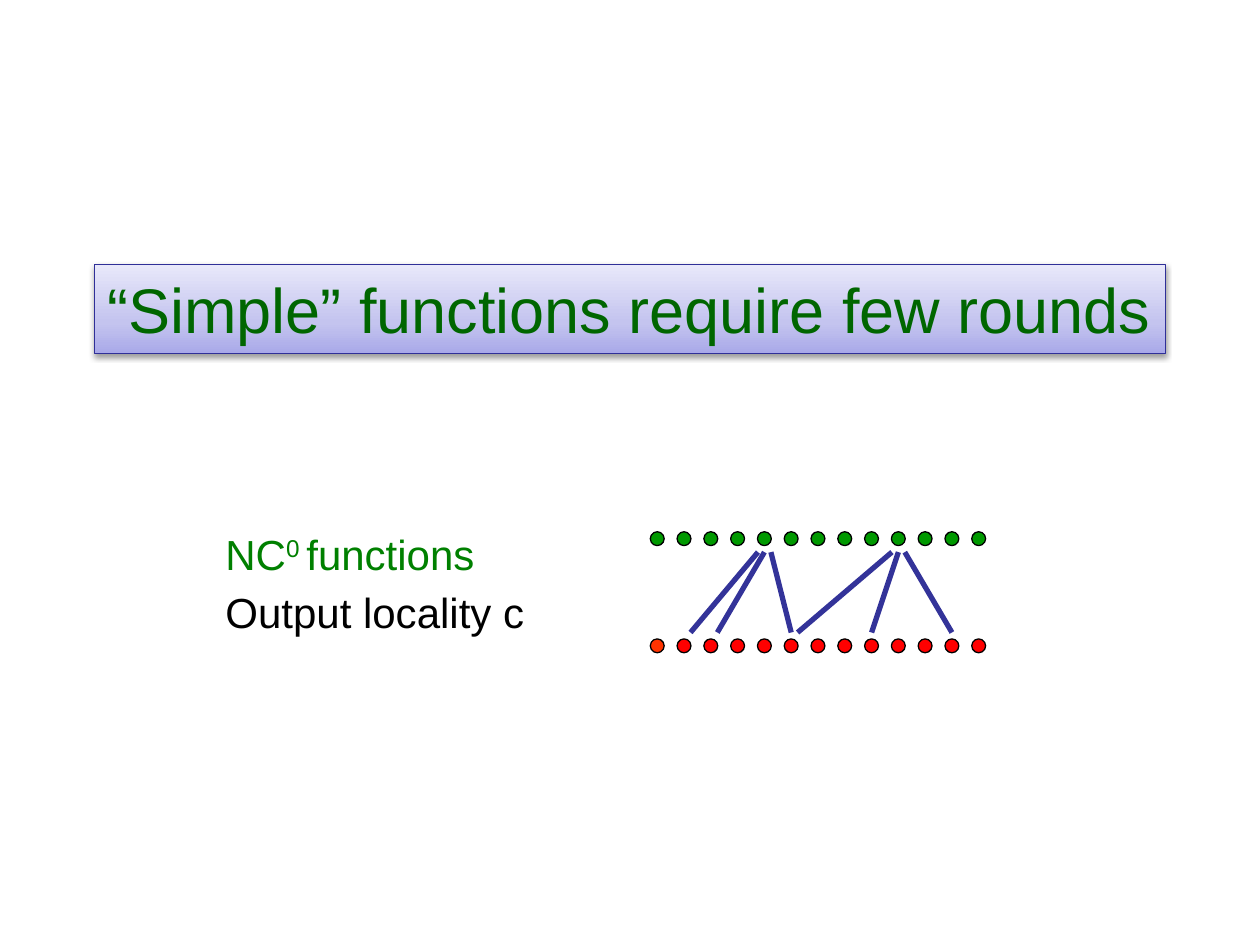
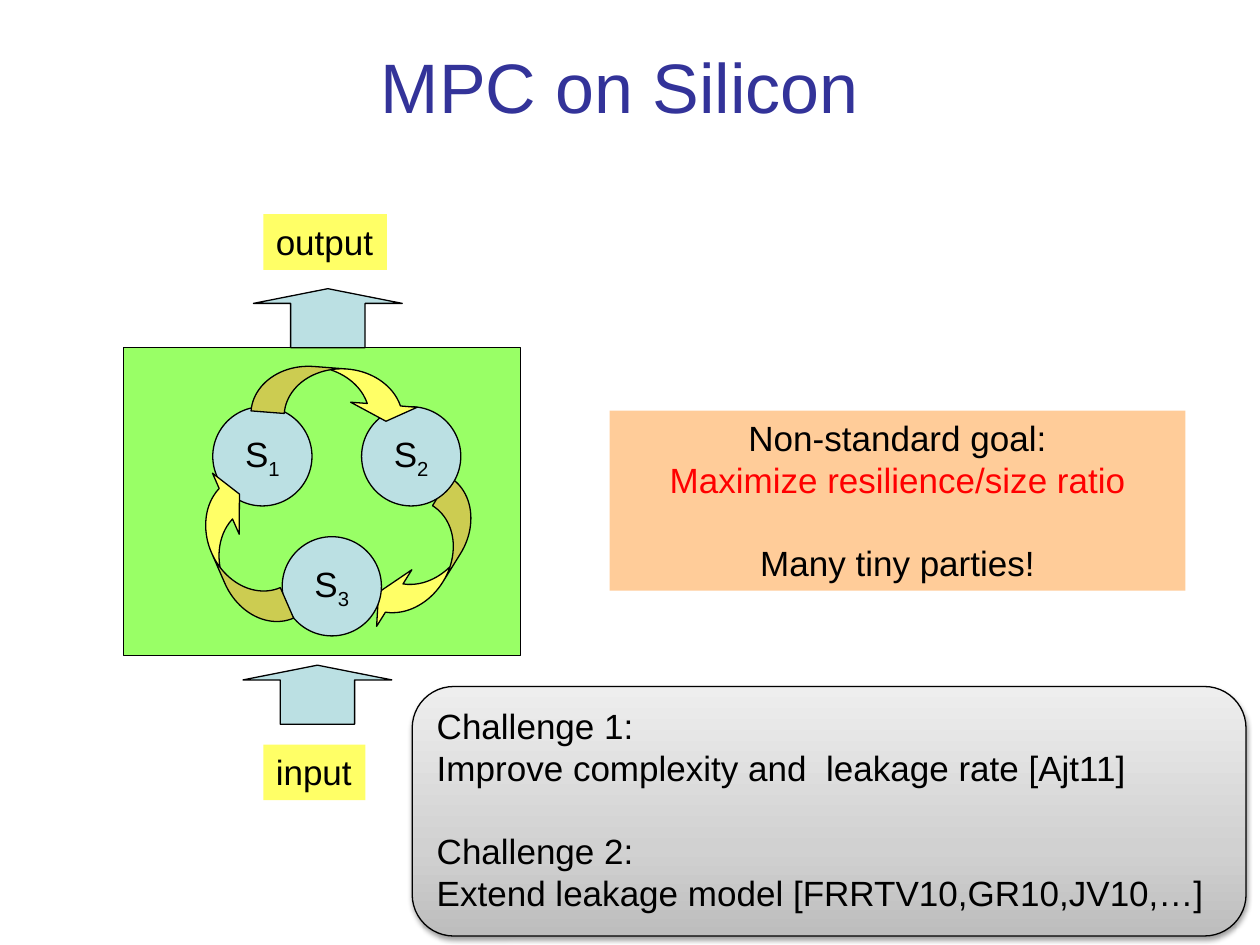
import copy

import pptx
import pptx.dml.color
import pptx.enum.shapes
import pptx.enum.text
import pptx.oxml
import pptx.oxml.ns
import pptx.util

Cm = pptx.util.Cm
Pt = pptx.util.Pt
RGB = pptx.dml.color.RGBColor.from_string
SHAPE = pptx.enum.shapes.MSO_SHAPE
ALIGN = pptx.enum.text.PP_ALIGN
ANCHOR = pptx.enum.text.MSO_ANCHOR
FONT = "Arial"
COLORS = {
    "black": "000000", "blue": "333399", "banner_line": "2F2F98",
    "banner_text": "006600", "green_text": "008000", "green_dot": "009900",
    "red": "FF0000", "orange_dot": "FF3300", "chip": "99FF66",
    "pale_blue": "BBE0E3", "yellow": "FFFF66", "peach": "FFCC99",
}
GRADIENTS = {
    "lilac": ("A9A9E9", "C4C4EF", "E8E8FA"),
    "grey": ("BDBDBD", "D1D1D1", "EEEEEE"),
}


def add_shape(slide, kind, left, top, width, height, fill, outlined=True):
    """Add a flat shape, measured in cm, with an optional thin black outline."""
    sp = slide.shapes.add_shape(kind, Cm(left), Cm(top), Cm(width), Cm(height))
    sp.shadow.inherit = False
    sp.fill.solid()
    sp.fill.fore_color.rgb = RGB(COLORS[fill])
    if outlined:
        sp.line.color.rgb = RGB(COLORS["black"])
        sp.line.width = Pt(0.75)
    else:
        sp.line.fill.background()
    return sp


def format_text(sp, size, color="black", align=ALIGN.LEFT, anchor=ANCHOR.TOP, wrap=True):
    tf = sp.text_frame
    tf.auto_size = pptx.enum.text.MSO_AUTO_SIZE.NONE
    tf.word_wrap = wrap
    tf.vertical_anchor = anchor
    for p in tf.paragraphs:
        p.alignment = align
        for r in p.runs:
            r.font.name = FONT
            r.font.size = Pt(size)
            r.font.color.rgb = RGB(COLORS[color])


prs = pptx.Presentation()
prs.slide_width, prs.slide_height = Cm(25.4), Cm(19.05)

# Slide 1: simple functions
slide = prs.slides.add_slide(prs.slide_layouts[1])
banner, body = slide.placeholders
banner.left, banner.top, banner.width, banner.height = Cm(1.91), Cm(5.33), Cm(21.59), Cm(1.8)
banner.text_frame.text = "“Simple” functions require few rounds"
format_text(banner, 36, "banner_text", wrap=False)
banner.line.color.rgb = RGB(COLORS["banner_line"])
banner.line.width = Pt(0.75)

body.left, body.top, body.width, body.height = Cm(4.29), Cm(10.52), Cm(14.2), Cm(2.79)
body.text_frame.text = "NC\nOutput locality c"
nc, locality = body.text_frame.paragraphs
exponent = nc.add_run()
exponent.text = "0 "
exponent.font._element.set("baseline", "30000")
nc.add_run().text = "functions"
format_text(body, 24)
for r in nc.runs:
    r.font.color.rgb = RGB(COLORS["green_text"])
for p in (nc, locality):
    p._p.get_or_add_pPr().append(pptx.oxml.parse_xml(
        f"<a:buNone {pptx.oxml.ns.nsdecls('a')}/>"))

DOT_COUNT, DOT, DOT_X, PITCH = 13, 0.28, 13.25, 0.54
INPUT_Y, OUTPUT_Y = 12.88, 10.72
for i in range(DOT_COUNT):
    x = DOT_X + i * PITCH - DOT / 2
    input_color = "red" if i else "orange_dot"
    add_shape(slide, SHAPE.OVAL, x, INPUT_Y, DOT, DOT, input_color)
    add_shape(slide, SHAPE.OVAL, x, OUTPUT_Y, DOT, DOT, "green_dot")

# Each edge: input dot, its sideways shift, output dot, its sideways shift
SHIFT = 0.13
edges = ((1, 1, 4, -1), (2, 1, 4, 0), (5, 0, 4, 1),
         (5, 1, 9, -1), (8, 0, 9, 0), (11, 0, 9, 1))
for source, source_shift, target, target_shift in edges:
    line = slide.shapes.add_connector(
        pptx.enum.shapes.MSO_CONNECTOR.STRAIGHT,
        Cm(DOT_X + source * PITCH + source_shift * SHIFT), Cm(12.75),
        Cm(DOT_X + target * PITCH + target_shift * SHIFT), Cm(11.13))
    line.line.color.rgb = RGB(COLORS["blue"])
    line.line.width = Pt(3)
    line._element.spPr.append(pptx.oxml.parse_xml(
        f"<a:effectLst {pptx.oxml.ns.nsdecls('a')}/>"))

# Slide 2: MPC on silicon
slide = prs.slides.add_slide(prs.slide_layouts[5])
title = slide.shapes.title
title.left, title.top, title.width, title.height = Cm(1.7), Cm(0.13), Cm(21.59), Cm(3.18)
title.text_frame.text = "MPC on Silicon"
format_text(title, 40, "blue", ALIGN.CENTER, ANCHOR.MIDDLE)

add_shape(slide, SHAPE.RECTANGLE, 2.49, 7.01, 8, 6.2, "chip")
for left, top in ((4.9, 13.41), (5.11, 5.82)):
    sp = add_shape(slide, SHAPE.UP_ARROW, left, top, 3, 1.19, "pale_blue")
    sp.adjustments[0], sp.adjustments[1] = 0.5, 0.25

# The first arrow runs behind the parties, the other two in front of them
ring_arrows = ((8.1, 9.63, 31.9), (6.3, 6.22, 274.4), (4.29, 9.4, 156.4))
parties = ((4.29, 8.2), (7.29, 8.2), (5.69, 10.82))
for i, (left, top, angle) in enumerate(ring_arrows):
    sp = add_shape(slide, SHAPE.CURVED_LEFT_ARROW, left, top, 0.99, 3.4, "yellow")
    sp.rotation = angle
    for k, value in enumerate((0.678, 1.357, 0.333)):
        sp.adjustments[k] = value
    if i == 0:
        for number, (x, y) in enumerate(parties, 1):
            sp = add_shape(slide, SHAPE.OVAL, x, y, 2, 2, "pale_blue")
            sp.text_frame.text = "S"
            r = sp.text_frame.paragraphs[0].add_run()
            r.text = str(number)
            r.font._element.set("baseline", "-25000")
            format_text(sp, 20, "black", ALIGN.CENTER, ANCHOR.MIDDLE, wrap=False)

goal = add_shape(slide, SHAPE.RECTANGLE, 12.29, 8.28, 11.61, 3.63, "peach", outlined=False)
goal.text_frame.text = "Non-standard goal:\nMaximize resilience/size ratio\nMany tiny parties!"
format_text(goal, 20, align=ALIGN.CENTER)
goal.text_frame.paragraphs[1].runs[0].font.color.rgb = RGB(COLORS["red"])
goal.text_frame.paragraphs[2].space_before = Pt(23)

for label, top, width in (("output", 4.32, 2.49), ("input", 15.01, 2.06)):
    sp = add_shape(slide, SHAPE.RECTANGLE, 5.31, top, width, 1.12, "yellow", outlined=False)
    sp.text_frame.text = label
    format_text(sp, 20, wrap=False)

challenges = add_shape(slide, SHAPE.ROUNDED_RECTANGLE, 8.31, 13.84, 16.81, 5.03, "pale_blue")
challenges.text_frame.text = (
    "Challenge 1:\vImprove complexity and  leakage rate [Ajt11]\n"
    "Challenge 2:\vExtend leakage model [FRRTV10,GR10,JV10,…]")
format_text(challenges, 20)
challenges.text_frame.paragraphs[1].space_before = Pt(23)

# Shaded panels with a soft shadow
for sp, gradient in ((banner, "lilac"), (challenges, "grey")):
    sp.fill.gradient()
    sp.fill.gradient_angle = 90
    stops = sp._element.spPr.find(".//" + pptx.oxml.ns.qn("a:gsLst"))
    stops.insert(1, copy.deepcopy(stops[0]))
    for stop, position, color in zip(sp.fill.gradient_stops, (0, 0.35, 1), GRADIENTS[gradient]):
        stop.position = position
        stop.color.rgb = RGB(color)
    sp.shadow.inherit = False
    effects = sp._element.spPr.find(pptx.oxml.ns.qn("a:effectLst"))
    effects.append(pptx.oxml.parse_xml(
        f'<a:outerShdw {pptx.oxml.ns.nsdecls("a")} blurRad="40000" dist="20000" '
        'dir="5400000" rotWithShape="0"><a:srgbClr val="000000">'
        '<a:alpha val="38000"/></a:srgbClr></a:outerShdw>'))

prs.save("out.pptx")
